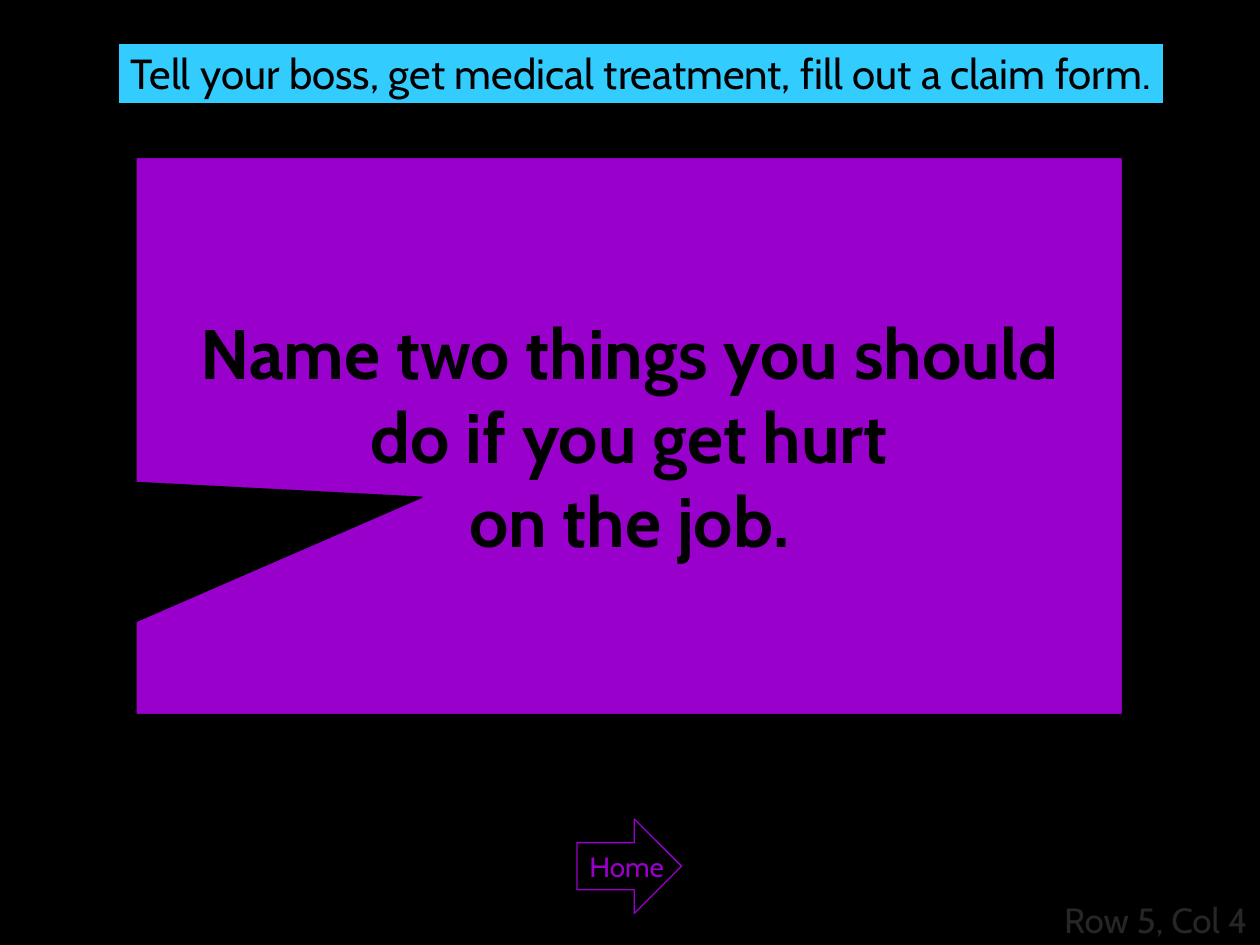
from dataclasses import dataclass
from typing import Optional

from pptx import Presentation
from pptx.dml.color import RGBColor as RGB
from pptx.enum.shapes import MSO_SHAPE as Kind
from pptx.enum.text import MSO_ANCHOR as Anchor, MSO_AUTO_SIZE as Fit, PP_ALIGN as Align
from pptx.util import Inches, Pt


@dataclass(frozen=True)
class Theme:
    font: str = "Cabin"
    black: str = "000000"
    purple: str = "9900CC"
    blue: str = "33CCFF"
    gray: str = "262626"
    big: int = 40
    mid: int = 24
    note: int = 20
    small: int = 16


@dataclass(frozen=True)
class Words:
    lines: tuple[str, ...]
    size: int
    color: str
    align: Align = Align.CENTER
    anchor: Anchor = Anchor.MIDDLE
    bold: bool = False
    wrap: bool = True
    fit: Fit = Fit.NONE


@dataclass(frozen=True)
class Item:
    box: tuple[float, float, float, float]
    words: Words
    kind: Optional[Kind] = None
    fill: str = ""
    line: str = ""
    width: float = 0.75
    adjust: tuple[float, ...] = ()


LOOK = Theme()

ARROW = Item(
    (4.58, 6.5, 0.83, 0.75),
    Words(("Home",), LOOK.small, LOOK.purple, align=Align.LEFT, wrap=False),
    Kind.RIGHT_ARROW, LOOK.black, LOOK.purple, adjust=(0.5, 0.5),
)
QUESTION = Item(
    (1.08, 1.25, 7.83, 4.42),
    Words(("Name two things you should", "do if you get hurt", "on the job."),
          LOOK.big, LOOK.black, bold=True),
    Kind.RECTANGULAR_CALLOUT, LOOK.purple, LOOK.black, adjust=(-0.21, 0.11),
)
ANSWER = Item(
    (0.92, 0.33, 8.33, 0.51),
    Words(("Tell your boss, get medical treatment, fill out a claim form.",),
          LOOK.mid, LOOK.black, anchor=Anchor.TOP, fit=Fit.SHAPE_TO_FIT_TEXT),
    Kind.RECTANGLE, LOOK.blue, LOOK.black, width=3,
)
LABEL = Item(
    (7.92, 7.08, 2.08, 0.42),
    Words(("Row 5, Col 4",), LOOK.note, LOOK.gray, align=Align.RIGHT, anchor=Anchor.TOP),
)


def write(frame, words: Words) -> None:
    frame.word_wrap = words.wrap
    frame.auto_size = words.fit
    frame.vertical_anchor = words.anchor
    for index, line in enumerate(words.lines):
        para = frame.add_paragraph() if index else frame.paragraphs[0]
        para.alignment = words.align
        run = para.add_run()
        run.text = line
        font = run.font
        font.name = LOOK.font
        font.size = Pt(words.size)
        font.bold = words.bold
        font.color.rgb = RGB.from_string(words.color)


def draw(slide, item: Item) -> None:
    box = [Inches(value) for value in item.box]
    if item.kind is None:
        shape = slide.shapes.add_textbox(*box)
    else:
        shape = slide.shapes.add_shape(item.kind, *box)
        shape.shadow.inherit = False
        shape.fill.solid()
        shape.fill.fore_color.rgb = RGB.from_string(item.fill)
        shape.line.color.rgb = RGB.from_string(item.line)
        shape.line.width = Pt(item.width)
        for index, value in enumerate(item.adjust):
            shape.adjustments[index] = value
    write(shape.text_frame, item.words)


def main() -> None:
    deck = Presentation()
    deck.slide_width, deck.slide_height = Inches(10), Inches(7.5)
    slide = deck.slides.add_slide(deck.slide_layouts[6])
    back = slide.background.fill
    back.solid()
    back.fore_color.rgb = RGB.from_string(LOOK.black)
    for item in (ARROW, QUESTION, ANSWER, LABEL):
        draw(slide, item)
    deck.save("out.pptx")


if __name__ == "__main__":
    main()
